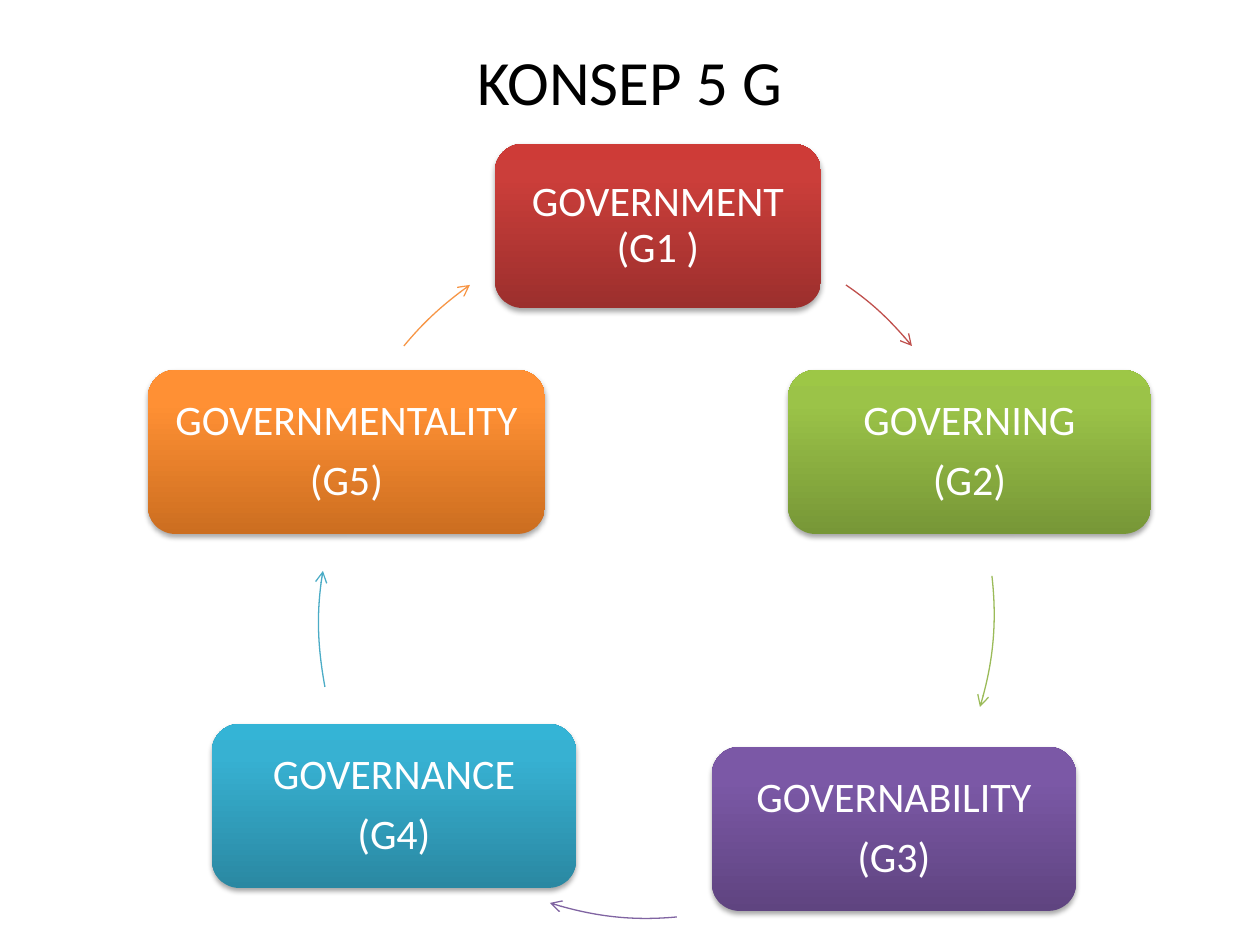
import copy

import lxml.etree
import pptx
import pptx.dml.color
import pptx.enum.shapes
import pptx.enum.text
import pptx.oxml.ns
import pptx.util

PX = 914400 // 126
BOX_HEIGHT = 164
CYCLE_SIZE = 655

BOXES = [
    (495, 144, 326, ["GOVERNMENT (G1 )"], ["9C2F2D", "CB3E3A", "CE3B37"]),
    (788, 370, 363, ["GOVERNING", "(G2)"], ["779737", "9BC348", "9DC746"]),
    (712, 747, 364, ["GOVERNABILITY", "(G3)"], ["5F4480", "7B58A6", "7C57A8"]),
    (212, 724, 364, ["GOVERNANCE", "(G4)"], ["2A88A2", "37B1D2", "34B4D6"]),
    (148, 370, 397, ["GOVERNMENTALITY", "(G5)"], ["CC6E20", "FF9034", "FF9136"]),
]

ARROWS = [
    (330, 226, [(846, 285), (871, 302), (893, 323), (912, 346)], "C0504D"),
    (339, 284, [(992, 576), (997, 620), (993, 665), (980, 707)], "9BBB59"),
    (321, 263, [(677, 917), (634, 921), (591, 916), (550, 903)], "8064A2"),
    (319, 296, [(325, 687), (318, 649), (316, 610), (323, 571)], "4BACC6"),
    (330, 226, [(404, 346), (423, 323), (446, 302), (470, 285)], "F79646"),
]


def px(*lengths):
    """Turn pixel lengths into EMU."""
    return [pptx.util.Emu(length * PX) for length in lengths]


def rgb(value):
    """Turn a hex string into a colour."""
    return pptx.dml.color.RGBColor.from_string(value)


def add_element(parent, tag, **attributes):
    """Append a drawing element with attributes to a parent."""
    element = lxml.etree.SubElement(parent, pptx.oxml.ns.qn(tag))
    for name, value in attributes.items():
        element.set(name, str(value))
    return element


def write_text(shape, lines, size=24, color="FFFFFF", margin=0.1, spacing=1.0, after=0):
    """Write centred paragraphs into a shape."""
    frame = shape.text_frame
    frame.word_wrap = True
    frame.vertical_anchor = pptx.enum.text.MSO_ANCHOR.MIDDLE
    frame.margin_left = frame.margin_right = pptx.util.Inches(0.1)
    frame.margin_top = frame.margin_bottom = pptx.util.Inches(margin)
    for index, line in enumerate(lines):
        paragraph = frame.add_paragraph() if index else frame.paragraphs[0]
        paragraph.alignment = pptx.enum.text.PP_ALIGN.CENTER
        paragraph.line_spacing = spacing
        paragraph.space_after = pptx.util.Pt(after)
        run = paragraph.add_run()
        run.text = line
        run.font.name = "Calibri"
        run.font.size = pptx.util.Pt(size)
        run.font.color.rgb = rgb(color)


def fill_gradient(shape, colors):
    """Fill a shape from bottom to top with three colours."""
    shape.fill.gradient()
    shape.fill.gradient_angle = 90
    stop_list = shape._element.spPr.find(".//" + pptx.oxml.ns.qn("a:gsLst"))
    stop_list.append(copy.deepcopy(stop_list[-1]))
    for stop, position, color in zip(shape.fill.gradient_stops, (0, 0.8, 1), colors):
        stop.position = position
        stop.color.rgb = rgb(color)


def add_shadow(shape):
    """Give a shape a soft shadow below it."""
    shape.shadow.inherit = False
    effects = shape._element.spPr.find(pptx.oxml.ns.qn("a:effectLst"))
    shadow = add_element(effects, "a:outerShdw", blurRad=40000, dist=23000,
                         dir=5400000, rotWithShape=0)
    color = add_element(shadow, "a:srgbClr", val="000000")
    add_element(color, "a:alpha", val=35000)


def add_box(slide, left, top, width, lines, colors):
    """Add a rounded concept box."""
    shape = slide.shapes.add_shape(
        pptx.enum.shapes.MSO_SHAPE.ROUNDED_RECTANGLE, *px(left, top, width, BOX_HEIGHT))
    fill_gradient(shape, colors)
    shape.line.fill.background()
    add_shadow(shape)
    write_text(shape, lines, spacing=0.9, after=8.4)


def draw_curve(shape, points):
    """Make the outline of a freeform one open cubic curve."""
    outline = shape._element.spPr.find(".//" + pptx.oxml.ns.qn("a:path"))
    for segment in list(outline):
        outline.remove(segment)
    for tag, group in (("a:moveTo", points[:1]), ("a:cubicBezTo", points[1:])):
        segment = add_element(outline, tag)
        for x, y in group:
            add_element(segment, "a:pt", x=x * PX, y=y * PX)


def add_curved_arrow(slide, left, top, controls, color):
    """Add a curved arrow inside the square frame of the cycle."""
    builder = slide.shapes.build_freeform(*px(left, top))
    builder.add_line_segments([px(left + CYCLE_SIZE, top + CYCLE_SIZE)], close=False)
    shape = builder.convert_to_shape()
    draw_curve(shape, [(x - left, y - top) for x, y in controls])
    shape.shadow.inherit = False
    shape.fill.background()
    shape.line.color.rgb = rgb(color)
    shape.line.width = pptx.util.Pt(0.75)
    add_element(shape._element.spPr.get_or_add_ln(), "a:tailEnd", type="arrow")


def main():
    """Build the slide and save it."""
    presentation = pptx.Presentation()
    presentation.slide_width, presentation.slide_height = px(1260, 945)
    slide = presentation.slides.add_slide(presentation.slide_layouts[6])
    title = slide.shapes.add_textbox(*px(84, 38, 1092, 84))
    write_text(title, ["KONSEP 5 G"], size=36, color="000000", margin=0.05)
    for box, arrow in zip(BOXES, ARROWS):
        add_box(slide, *box)
        add_curved_arrow(slide, *arrow)
    presentation.save("out.pptx")


if __name__ == "__main__":
    main()
